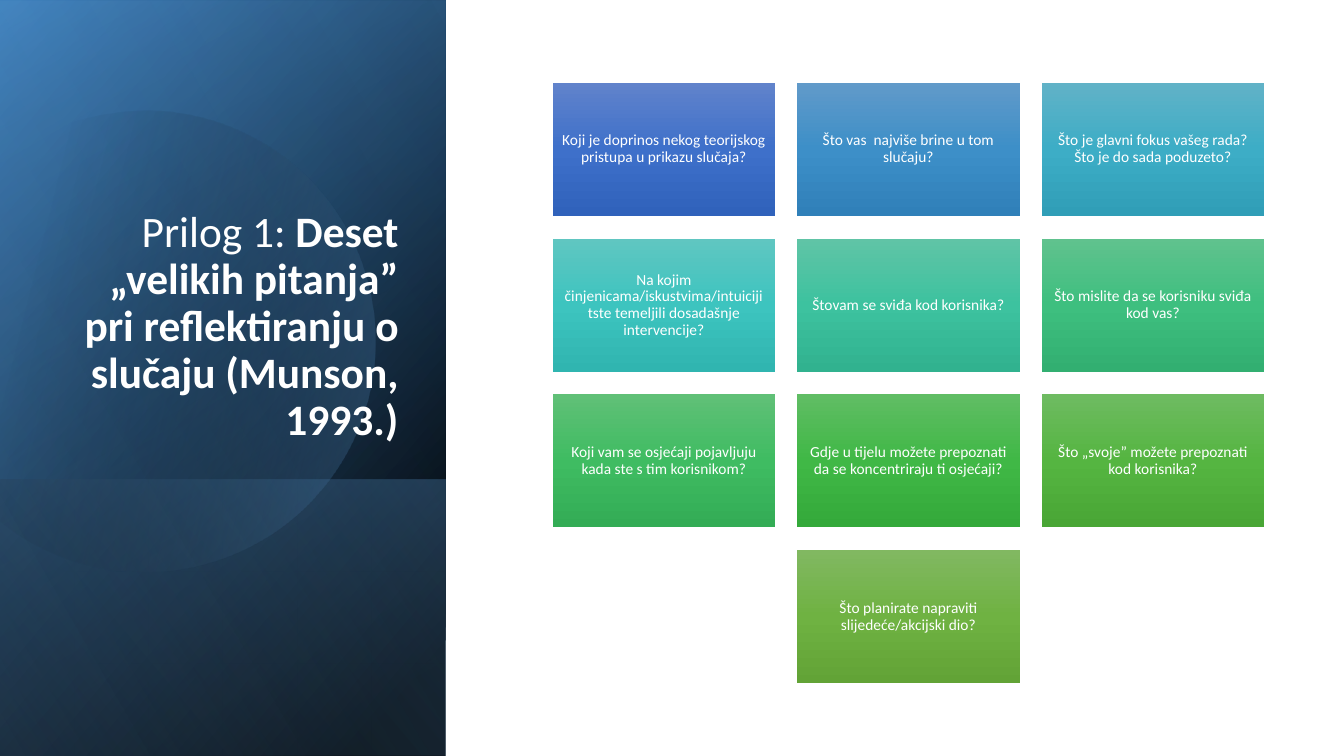
import math

from lxml import etree
from pptx import Presentation
from pptx.dml.color import RGBColor
from pptx.enum import shapes, text
from pptx.oxml.ns import qn
from pptx.util import Inches, Pt

FONT = "Calibri"
WHITE = RGBColor(0xFF, 0xFF, 0xFF)
BLACK = RGBColor(0x00, 0x00, 0x00)
DEEP_BLUE = RGBColor(0x2E, 0x75, 0xB6)
BLUE = RGBColor(0x5B, 0x9B, 0xD5)
PALE_BLUE = RGBColor(0x9D, 0xC3, 0xE6)

QUESTIONS = [
    ("Koji je doprinos nekog teorijskog pristupa u prikazu slučaja?", "6183CB", "3E70CA", "3062BB"),
    ("Što vas  najviše brine u tom slučaju?", "619AC9", "3D8FC8", "3080B9"),
    ("Što je glavni fokus vašeg rada? Što je do sada poduzeto?", "61B2C7", "3DADC6", "309EB7"),
    ("Na kojim činjenicama/iskustvima/intuiciji tste temeljili dosadašnje intervencije?",
     "60C6C1", "3DC4BF", "30B5B0"),
    ("Štovam se sviđa kod korisnika?", "60C4A6", "3DC29F", "31B28F"),
    ("Što mislite da se korisniku sviđa kod vas?", "60C28E", "3EBF7F", "32AF71"),
    ("Koji vam se osjećaji pojavljuju kada ste s tim korisnikom?", "60C077", "3FBC62", "33AC55"),
    ("Gdje u tijelu možete prepoznati da se koncentriraju ti osjećaji?", "60BD64", "40B846", "34A93A"),
    ("Što „svoje” možete prepoznati kod korisnika?", "6EBB61", "55B541", "49A635"),
    ("Što planirate napraviti slijedeće/akcijski dio?", "81B861", "6FB242", "62A336"),
]

CIRCLE_OUTLINE = [
    ("moveTo", (1.49, 1.1)),
    ("cubicBezTo", (2.46, 1.12), (3.35, 1.77), (3.63, 2.75)),
    ("cubicBezTo", (3.98, 3.97), (3.28, 5.23), (2.07, 5.58)),
    ("cubicBezTo", (1.31, 5.8), (0.53, 5.61), (-0.03, 5.14)),
    ("lnTo", (-0.15, 5.03)),
    ("lnTo", (-0.15, 1.75)),
    ("lnTo", (0, 1.61)),
    ("cubicBezTo", (0.23, 1.42), (0.5, 1.28), (0.8, 1.19)),
    ("cubicBezTo", (1.03, 1.13), (1.26, 1.1), (1.49, 1.1)),
    ("close",),
]
CIRCLE_TILT = 16.1


def paint(shape, angle, stops):
    shape.shadow.inherit = False
    shape.line.fill.background()
    shape.fill.gradient()
    shape.fill.gradient_angle = (360 - angle) % 360
    stop_list = shape._element.spPr.find(qn("a:gradFill")).find(qn("a:gsLst"))
    for old_stop in list(stop_list):
        stop_list.remove(old_stop)
    for position, color, opacity in stops:
        stop = etree.SubElement(stop_list, qn("a:gs"), pos=str(position * 1000))
        value = etree.SubElement(stop, qn("a:srgbClr"), val=str(color))
        if opacity < 100:
            etree.SubElement(value, qn("a:alpha"), val=str(opacity * 1000))


def add_turned_panel(slide, left, top, width, height, angle, stops):
    panel = slide.shapes.add_shape(
        shapes.MSO_SHAPE.RECTANGLE,
        Inches(left + (width - height) / 2), Inches(top + (height - width) / 2),
        Inches(height), Inches(width))
    panel.rotation = 90
    panel._element.spPr.find(qn("a:xfrm")).set("flipH", "1")
    paint(panel, angle, stops)


def add_circle(slide, left, top, width, height):
    cosine = math.cos(math.radians(CIRCLE_TILT))
    sine = math.sin(math.radians(CIRCLE_TILT))
    right, bottom = left + width, top + height
    builder = slide.shapes.build_freeform(Inches(left), Inches(top))
    builder.add_line_segments(
        [(Inches(x), Inches(y)) for x, y in ((right, top), (right, bottom), (left, bottom))])
    circle = builder.convert_to_shape()
    outline = next(circle._element.iter(qn("a:path")))
    for old_step in list(outline):
        outline.remove(old_step)
    for command, *points in CIRCLE_OUTLINE:
        step = etree.SubElement(outline, qn("a:" + command))
        for point_x, point_y in points:
            x = point_x - left - width / 2
            y = point_y - top - height / 2
            etree.SubElement(
                step, qn("a:pt"),
                x=str(Inches(width / 2 + x * cosine - y * sine)),
                y=str(Inches(height / 2 + x * sine + y * cosine)))
    circle.rotation = 360 - CIRCLE_TILT
    paint(circle, 30, [(29, BLACK, 0), (100, BLUE, 43)])


def add_title(slide, left, top, width, height):
    box = slide.shapes.add_textbox(Inches(left), Inches(top), Inches(width), Inches(height))
    frame = box.text_frame
    frame.word_wrap = True
    frame.vertical_anchor = text.MSO_ANCHOR.BOTTOM
    paragraph = frame.paragraphs[0]
    paragraph.alignment = text.PP_ALIGN.RIGHT
    paragraph.line_spacing = 0.9
    for words, bold in (
            ("Prilog 1: ", False),
            ("Deset „velikih pitanja” pri reflektiranju o slučaju (Munson, 1993.)", True)):
        run = paragraph.add_run()
        run.text = words
        run.font.name = FONT
        run.font.size = Pt(31)
        run.font.bold = bold
        run.font.color.rgb = WHITE


def add_side_panel(slide, left, top, width, height):
    box = (left, top, width, height)
    add_turned_panel(slide, *box, 50, [(8, BLACK, 100), (100, DEEP_BLUE, 100)])
    add_turned_panel(slide, left, top + 0.01, width, height, 30,
                     [(0, BLACK, 0), (99, BLUE, 46)])
    add_turned_panel(slide, left, top + height - 2.74, width, 2.74, 130,
                     [(2, BLUE, 29), (100, BLACK, 30)])
    add_circle(slide, left - 0.55, top + 1.06, 4.27, 4.57)
    add_turned_panel(slide, *box, 120, [(0, BLACK, 0), (99, PALE_BLUE, 11)])
    add_title(slide, left + 0.64, top + 1.84, 3.41, 2.62)


def add_tile(slide, left, top, width, height, question, colors):
    tile = slide.shapes.add_shape(
        shapes.MSO_SHAPE.RECTANGLE, Inches(left), Inches(top), Inches(width), Inches(height))
    paint(tile, 90, [(position, RGBColor.from_string(color), 100)
                     for position, color in zip((0, 50, 100), colors)])
    frame = tile.text_frame
    frame.word_wrap = True
    frame.vertical_anchor = text.MSO_ANCHOR.MIDDLE
    frame.margin_left = frame.margin_right = Inches(0.05)
    frame.margin_top = frame.margin_bottom = Inches(0.05)
    paragraph = frame.paragraphs[0]
    paragraph.text = question
    paragraph.alignment = text.PP_ALIGN.CENTER
    paragraph.line_spacing = 0.9
    paragraph.font.name = FONT
    paragraph.font.size = Pt(11)
    paragraph.font.color.rgb = WHITE


def add_question_grid(slide, left, top, width, height, columns=3):
    tile_width, tile_height = 2.21, 1.32
    rows = math.ceil(len(QUESTIONS) / columns)
    column_step = (width - tile_width) / (columns - 1)
    row_step = (height - tile_height) / (rows - 1)
    for index, (question, *colors) in enumerate(QUESTIONS):
        row, column = divmod(index, columns)
        in_row = min(columns, len(QUESTIONS) - row * columns)
        column += (columns - in_row) / 2
        add_tile(slide, left + column * column_step, top + row * row_step,
                 tile_width, tile_height, question, colors)


def main():
    presentation = Presentation()
    presentation.slide_width = Inches(13.33)
    presentation.slide_height = Inches(7.5)
    slide = presentation.slides.add_slide(presentation.slide_layouts[6])
    add_side_panel(slide, 0, 0, 4.42, 7.5)
    add_question_grid(slide, 5.48, 0.82, 7.06, 5.96)
    presentation.save("out.pptx")


if __name__ == "__main__":
    main()
